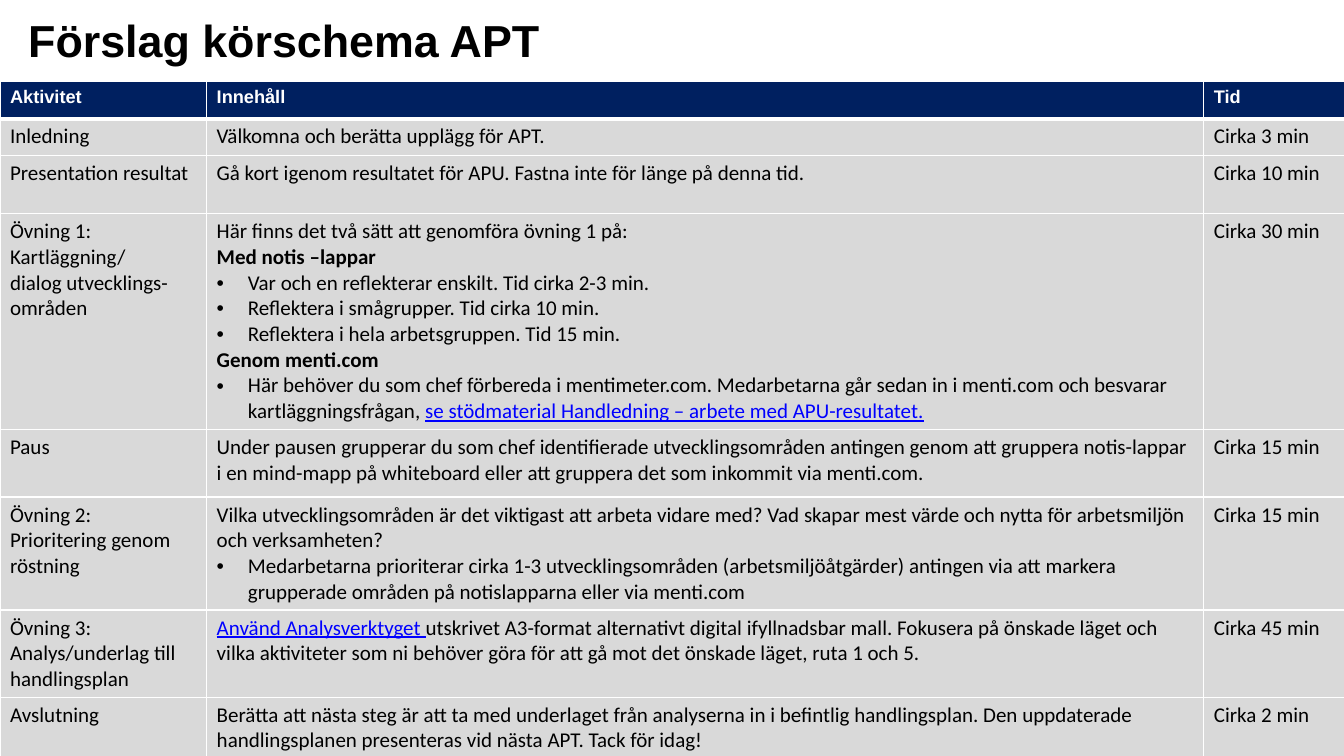
from lxml.etree import SubElement
from pptx import Presentation
from pptx.dml.color import RGBColor
from pptx.enum.text import MSO_ANCHOR as Anchor, MSO_AUTO_SIZE as Auto, PP_ALIGN as Align
from pptx.oxml import parse_xml
from pptx.oxml.ns import nsdecls, qn
from pptx.util import Inches, Pt

WHITE, BLACK, NAVY, GREY, BLUE = "FFFFFF", "000000", "002060", "D9D9D9", "0000FF"
TITLE = dict(name="Arial", size=Pt(32), bold=True)
HEAD = dict(name="Arial", size=Pt(13), bold=True)
BODY = dict(name="Calibri", size=Pt(15), bold=False, underline=False)
MARKS = {"*": dict(bold=True), "~": dict(underline=True)}
COLS = [2.05, 9.89, 1.42]
HIGHS = [0.37, 0.36, 0.58, 2.14, 0.67, 1.12, 0.83, 0.83]
ROWS = [
    ("Aktivitet", "Innehåll", "Tid"),
    ("Inledning", "Välkomna och berätta upplägg för APT.", "Cirka 3 min"),
    ("Presentation resultat",
     "Gå kort igenom resultatet för APU. Fastna inte för länge på denna tid.",
     "Cirka 10 min"),
    ("Övning 1: Kartläggning/\vdialog utvecklings-områden",
     "Här finns det två sätt att genomföra övning 1 på: \v|*Med notis –lappar\n"
     "•Var och en reflekterar enskilt. Tid cirka 2-3 min.\n"
     "•Reflektera i smågrupper. Tid cirka 10 min.\n"
     "•Reflektera i hela arbetsgruppen. Tid 15 min.\n"
     "*Genom menti.com\n"
     "•Här behöver du som chef förbereda i mentimeter.com. Medarbetarna går sedan in i "
     "menti.com och besvarar kartläggningsfrågan, "
     "|~se stödmaterial Handledning – arbete med APU-resultatet.",
     "Cirka 30 min"),
    ("Paus",
     "Under pausen grupperar du som chef identifierade utvecklingsområden antingen genom "
     "att gruppera notis-lappar i en mind-mapp på whiteboard eller att gruppera det som "
     "inkommit via menti.com.",
     "Cirka 15 min"),
    ("Övning 2: \vPrioritering genom röstning",
     "Vilka utvecklingsområden är det viktigast att arbeta vidare med? Vad skapar mest "
     "värde och nytta för arbetsmiljön och verksamheten?\n"
     "•Medarbetarna prioriterar cirka 1-3 utvecklingsområden (arbetsmiljöåtgärder) "
     "antingen via att markera grupperade områden på notislapparna eller via menti.com",
     "Cirka 15 min"),
    ("Övning 3: Analys/underlag till handlingsplan",
     "~Använd Analysverktyget |utskrivet A3-format alternativt digital ifyllnadsbar mall. "
     "Fokusera på önskade läget och vilka aktiviteter som ni behöver göra för att gå mot "
     "det önskade läget, ruta 1 och 5.",
     "Cirka 45 min"),
    ("Avslutning",
     "Berätta att nästa steg är att ta med underlaget från analyserna in i befintlig "
     "handlingsplan. Den uppdaterade handlingsplanen presenteras vid nästa APT. "
     "Tack för idag!",
     "Cirka 2 min"),
]


def color(code):
    return RGBColor.from_string(code)


def style(font, form, code):
    for key, value in form.items():
        setattr(font, key, value)
    font.color.rgb = color(code)


def bullet(para):
    props = para._p.get_or_add_pPr()
    props.set("marL", str(Inches(0.31)))
    props.set("indent", str(-Inches(0.31)))
    SubElement(props, qn("a:buFont"), typeface="Arial")
    SubElement(props, qn("a:buChar"), char="•")


def write(frame, text, form, code):
    for i, line in enumerate(text.split("\n")):
        para = frame.add_paragraph() if i else frame.paragraphs[0]
        if line.startswith("•"):
            bullet(para)
            line = line[1:]
        for part in line.split("|"):
            mark = part[0]
            look = form | MARKS.get(mark, {})
            tint = BLUE if mark == "~" else code
            for j, piece in enumerate(part.lstrip("*~").split("\v")):
                if j:
                    para.add_line_break()
                if piece:
                    run = para.add_run()
                    run.text = piece
                    style(run.font, look, tint)


def border(cell, base):
    props = cell._tc.get_or_add_tcPr()
    for i, side in enumerate("LRTB"):
        width = Pt(base if side == "B" else 1)
        props.insert(i, parse_xml(
            f'<a:ln{side} {nsdecls("a")} w="{width}"><a:solidFill>'
            f'<a:srgbClr val="{WHITE}"/></a:solidFill></a:ln{side}>'))


def title(slide, box):
    shape = slide.shapes.title
    shape.left, shape.top, shape.width, shape.height = map(Inches, box)
    frame = shape.text_frame
    form = dict(margin_left=0, margin_top=0, margin_right=0, margin_bottom=0,
                word_wrap=True, auto_size=Auto.NONE, vertical_anchor=Anchor.TOP)
    for key, value in form.items():
        setattr(frame, key, value)
    write(frame, "Förslag körschema APT", TITLE, BLACK)
    frame.paragraphs[0].alignment = Align.LEFT


def plan(slide, box):
    table = slide.shapes.add_table(len(ROWS), len(COLS), *map(Inches, box)).table
    for col, width in zip(table.columns, COLS):
        col.width = Inches(width)
    for r, (row, high) in enumerate(zip(ROWS, HIGHS)):
        table.rows[r].height = Inches(high)
        form, ink, back, base = (BODY, BLACK, GREY, 1) if r else (HEAD, WHITE, NAVY, 3)
        for c, text in enumerate(row):
            cell = table.cell(r, c)
            cell.fill.solid()
            cell.fill.fore_color.rgb = color(back)
            border(cell, base)
            write(cell.text_frame, text, form, ink)


def main():
    deck = Presentation()
    deck.slide_width, deck.slide_height = Inches(13.33), Inches(7.5)
    slide = deck.slides.add_slide(deck.slide_layouts[5])
    title(slide, (0.28, 0.13, 10.64, 0.96))
    plan(slide, (0, 0.81, sum(COLS), sum(HIGHS)))
    deck.save("out.pptx")


if __name__ == "__main__":
    main()
